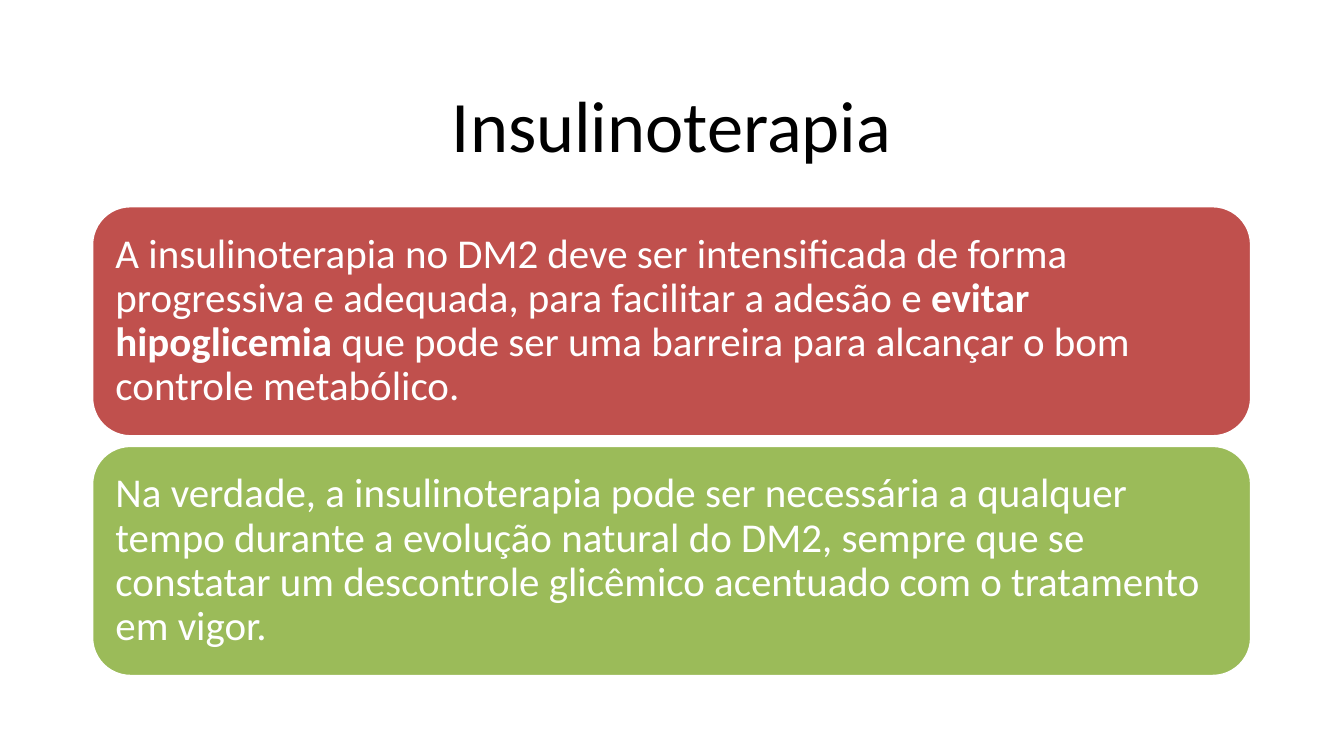
from dataclasses import dataclass

from pptx import Presentation
from pptx import util as u
from pptx.dml.color import RGBColor
from pptx.enum import shapes, text


@dataclass(frozen=True)
class Theme:
    font: str = "Calibri"
    ink: str = "000000"
    paper: str = "FFFFFF"
    red: str = "C0504D"
    green: str = "9BBB59"
    title_size: float = 69
    body_size: float = 39
    outline: float = 2
    inset: float = 0.16


WIDTH, HEIGHT = 17.78, 10
MARGIN, CONTENT_WIDTH = 1.22, 15.33
TITLE_TOP, TITLE_HEIGHT = 0.81, 1.65
PANEL_TOP, PANEL_HEIGHT, PANEL_GAP = 2.73, 3.04, 0.13

MESSAGES = [
    [
        ("A insulinoterapia no DM2 deve ser intensificada de forma progressiva "
         "e adequada, para facilitar a adesão e ", False),
        ("evitar hipoglicemia ", True),
        ("que pode ser uma barreira para alcançar o bom controle metabólico.", False),
    ],
    [
        ("Na verdade, a insulinoterapia pode ser necessária a qualquer tempo "
         "durante a evolução natural do DM2, sempre que se constatar um "
         "descontrole glicêmico acentuado com o tratamento em vigor.", False),
    ],
]


def write(frame, runs, *, font, size, color, align, inset=0.1, spacing=1.0):
    """Fill a frame with one paragraph of (wording, bold) runs."""
    frame.word_wrap = True
    frame.auto_size = text.MSO_AUTO_SIZE.NONE
    frame.vertical_anchor = text.MSO_ANCHOR.MIDDLE
    frame.margin_left = frame.margin_right = u.Inches(inset)
    frame.margin_top = frame.margin_bottom = u.Inches(inset)
    paragraph = frame.paragraphs[0]
    paragraph.alignment = align
    paragraph.line_spacing = spacing
    for wording, bold in runs:
        run = paragraph.add_run()
        run.text = wording
        run.font.name = font
        run.font.size = u.Pt(size)
        run.font.bold = bold
        run.font.color.rgb = RGBColor.from_string(color)


class SlideBuilder:
    def __init__(self, deck, theme):
        self.theme = theme
        self.slide = deck.slides.add_slide(deck.slide_layouts[5])

    def title(self, wording):
        heading = self.slide.shapes.title
        heading.left, heading.top = u.Inches(MARGIN), u.Inches(TITLE_TOP)
        heading.width, heading.height = u.Inches(CONTENT_WIDTH), u.Inches(TITLE_HEIGHT)
        write(heading.text_frame, [(wording, False)], font=self.theme.font,
              size=self.theme.title_size, color=self.theme.ink,
              align=text.PP_ALIGN.CENTER)

    def panel(self, row, runs, fill):
        top = PANEL_TOP + row * (PANEL_HEIGHT + PANEL_GAP)
        panel = self.slide.shapes.add_shape(
            shapes.MSO_SHAPE.ROUNDED_RECTANGLE, u.Inches(MARGIN), u.Inches(top),
            u.Inches(CONTENT_WIDTH), u.Inches(PANEL_HEIGHT))
        panel.shadow.inherit = False
        panel.fill.solid()
        panel.fill.fore_color.rgb = RGBColor.from_string(fill)
        panel.line.color.rgb = RGBColor.from_string(self.theme.paper)
        panel.line.width = u.Pt(self.theme.outline)
        write(panel.text_frame, runs, font=self.theme.font,
              size=self.theme.body_size, color=self.theme.paper,
              align=text.PP_ALIGN.LEFT, inset=self.theme.inset, spacing=0.9)


def main():
    deck = Presentation()
    deck.slide_width, deck.slide_height = u.Inches(WIDTH), u.Inches(HEIGHT)
    theme = Theme()
    builder = SlideBuilder(deck, theme)
    builder.title("Insulinoterapia")
    for row, (runs, fill) in enumerate(zip(MESSAGES, (theme.red, theme.green))):
        builder.panel(row, runs, fill)
    deck.save("out.pptx")


if __name__ == "__main__":
    main()
